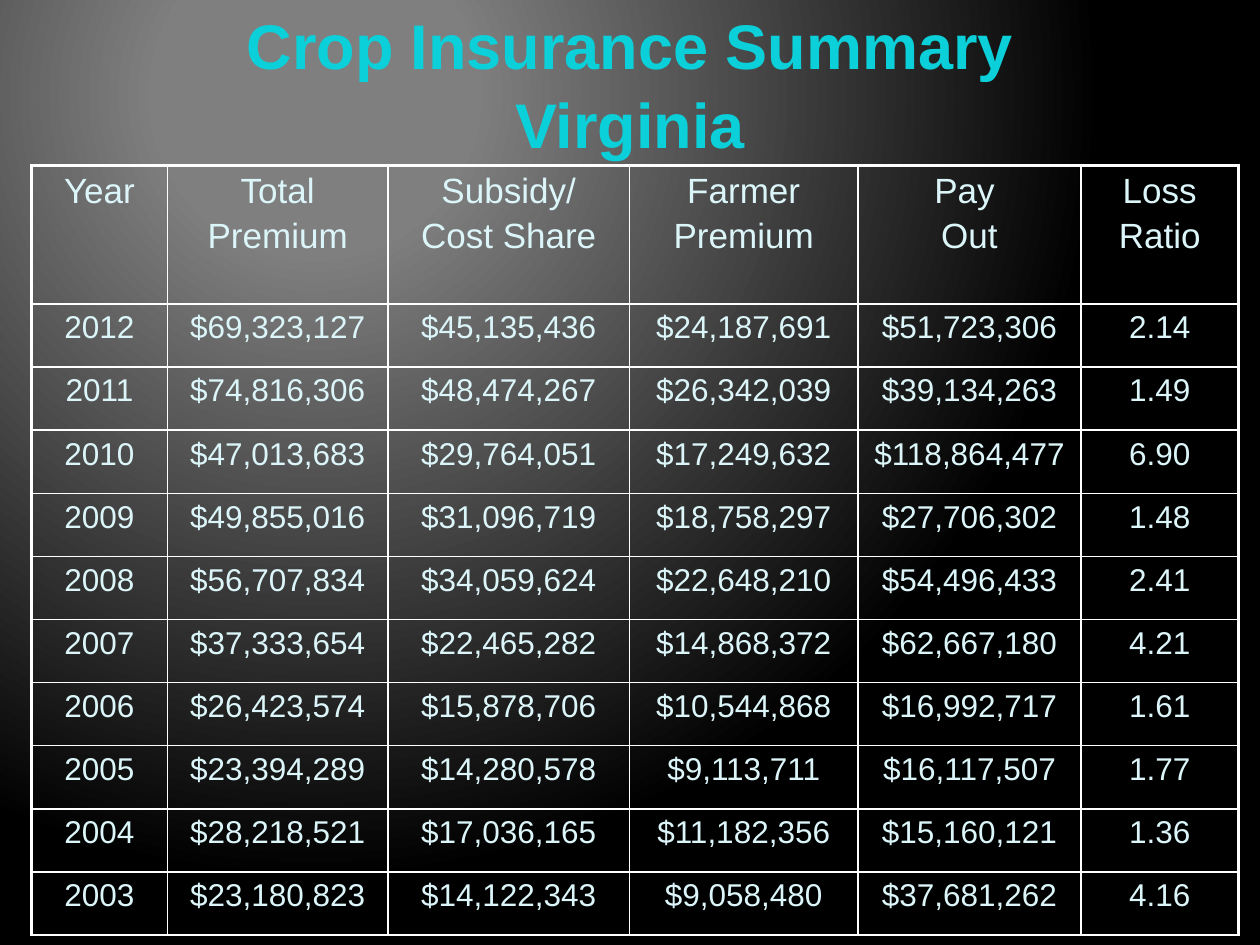
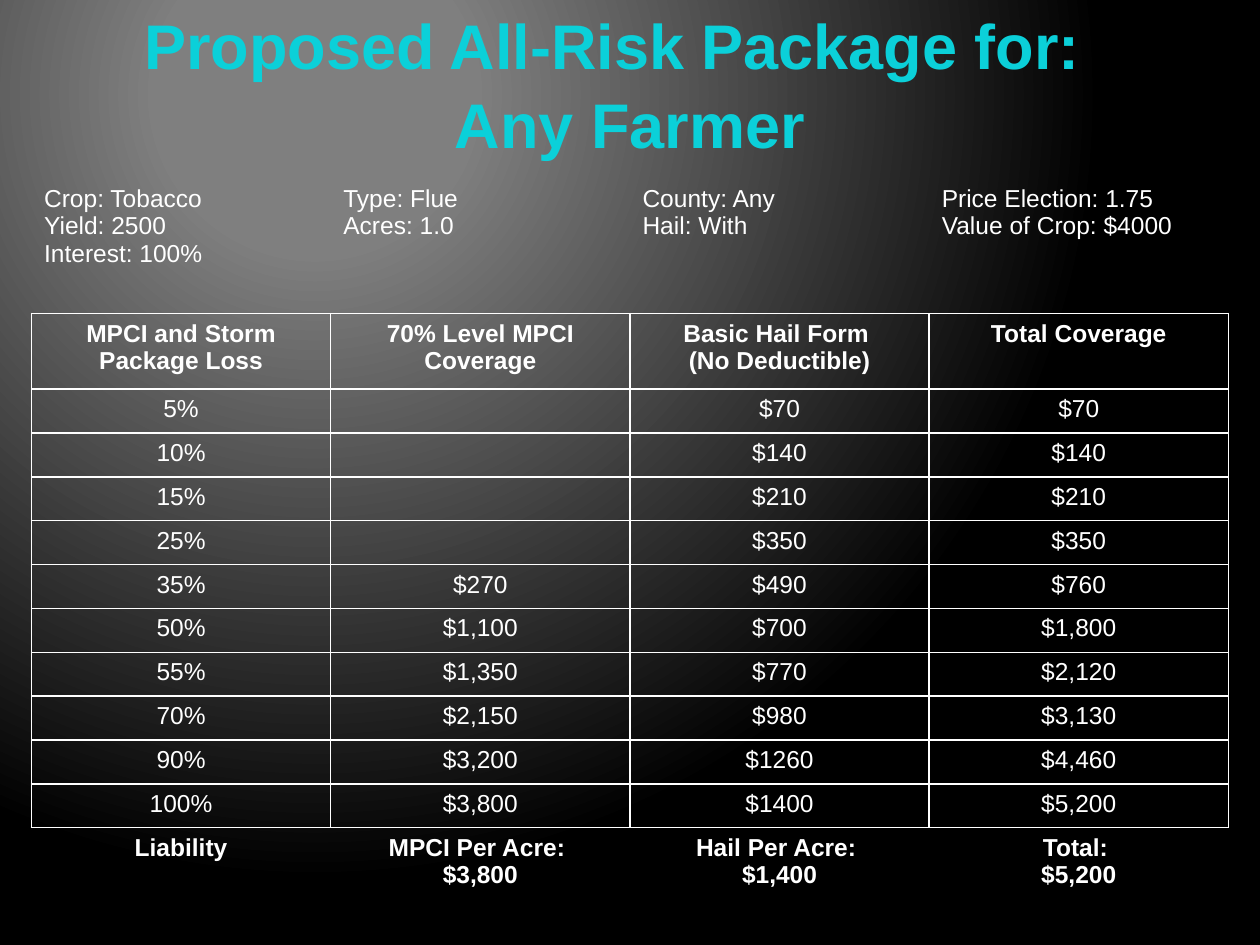
from lxml.etree import SubElement
from pptx import Presentation
from pptx.dml.color import RGBColor
from pptx.enum.text import MSO_ANCHOR, PP_ALIGN
from pptx.oxml import parse_xml
from pptx.oxml.ns import nsdecls, qn
from pptx.util import Pt

TITLE_CYAN = RGBColor(0x0B, 0xD0, 0xD9)
PALE_CYAN = RGBColor(0xDB, 0xF5, 0xF9)
WHITE = RGBColor(0xFF, 0xFF, 0xFF)
GREY = RGBColor(0x7F, 0x7F, 0x7F)
BLACK = RGBColor(0x00, 0x00, 0x00)
FONT = "Arial"
TITLE_ONLY = 5
THIN, THICK = 1, 2.25

SUMMARY_HEADINGS = ["Year", "Total\nPremium", "Subsidy/\nCost Share",
                    "Farmer\nPremium", "Pay \nOut", "Loss\nRatio"]
SUMMARY = [
    ["2012", "$69,323,127", "$45,135,436", "$24,187,691", "$51,723,306", "2.14"],
    ["2011", "$74,816,306", "$48,474,267", "$26,342,039", "$39,134,263", "1.49"],
    ["2010", "$47,013,683", "$29,764,051", "$17,249,632", "$118,864,477", "6.90"],
    ["2009", "$49,855,016", "$31,096,719", "$18,758,297", "$27,706,302", "1.48"],
    ["2008", "$56,707,834", "$34,059,624", "$22,648,210", "$54,496,433", "2.41"],
    ["2007", "$37,333,654", "$22,465,282", "$14,868,372", "$62,667,180", "4.21"],
    ["2006", "$26,423,574", "$15,878,706", "$10,544,868", "$16,992,717", "1.61"],
    ["2005", "$23,394,289", "$14,280,578", "$9,113,711", "$16,117,507", "1.77"],
    ["2004", "$28,218,521", "$17,036,165", "$11,182,356", "$15,160,121", "1.36"],
    ["2003", "$23,180,823", "$14,122,343", "$9,058,480", "$37,681,262", "4.16"],
]

POLICY_FACTS = ["Crop: Tobacco\nYield: 2500\nInterest: 100%",
                "Type: Flue\nAcres: 1.0",
                "County: Any\nHail: With",
                "Price Election: 1.75\nValue of Crop: $4000"]
COVERAGE_HEADINGS = ["MPCI and Storm Package Loss", "70% Level MPCI Coverage",
                     "Basic Hail Form \n(No Deductible)", "Total Coverage"]
COVERAGE = [
    ["5%", "", "$70", "$70"],
    ["10%", "", "$140", "$140"],
    ["15%", "", "$210", "$210"],
    ["25%", "", "$350", "$350"],
    ["35%", "$270", "$490", "$760"],
    ["50%", "$1,100", "$700", "$1,800"],
    ["55%", "$1,350", "$770", "$2,120"],
    ["70%", "$2,150", "$980", "$3,130"],
    ["90%", "$3,200", "$1260", "$4,460"],
    ["100%", "$3,800", "$1400", "$5,200"],
]
LIABILITY = ["Liability", "MPCI Per Acre: \n$3,800",
             "Hail Per Acre: \n$1,400", "Total: \n$5,200"]


def set_spotlight_background(master):
    """Grey glow at the upper left that fades to black."""
    fill = master.background.fill
    fill.gradient()
    for stop, color, position in zip(fill.gradient_stops, (GREY, BLACK), (0.2, 1)):
        stop.color.rgb = color
        stop.position = position
    linear = next(master.element.iter(qn("a:lin")))
    linear.getparent().replace(linear, parse_xml(
        f'<a:path {nsdecls("a")} path="circle">'
        '<a:fillToRect l="50000" t="20000" r="100000" b="100000"/></a:path>'))


def style_font(font, size, color, bold=False):
    font.name = FONT
    font.size = Pt(size)
    font.bold = bold
    font.color.rgb = color


def line_xml(tag, width):
    """Solid white line of the given width, or no line for width 0."""
    paint = (f'<a:solidFill><a:srgbClr val="{WHITE}"/></a:solidFill>'
             if width else "<a:noFill/>")
    return parse_xml(f'<a:{tag} {nsdecls("a")} w="{Pt(width)}">{paint}</a:{tag}>')


def add_page(deck, title_text):
    page = deck.slides.add_slide(deck.slide_layouts[TITLE_ONLY])
    title = page.shapes.title
    title.left, title.top, title.width, title.height = 0, 0, Pt(720), Pt(94.3)
    title.text_frame.vertical_anchor = MSO_ANCHOR.MIDDLE
    para = title.text_frame.paragraphs[0]
    para.text = title_text
    para.alignment = PP_ALIGN.CENTER
    para.line_spacing = 1.04
    style_font(para.font, 36, TITLE_CYAN, bold=True)
    for properties in title.element.iter(qn("a:defRPr")):
        properties.insert(0, line_xml("ln", 1.5))
    return page


def add_grid(page, left, top, widths, heights):
    """Add a plain table without style banding."""
    frame = page.shapes.add_table(len(heights), len(widths), Pt(left), Pt(top),
                                  Pt(sum(widths)), Pt(sum(heights)))
    table = frame.table
    table.first_row = table.horz_banding = False
    for column, width in zip(table.columns, widths):
        column.width = Pt(width)
    for row, height in zip(table.rows, heights):
        row.height = Pt(height)
    return table


def fill_row(row, texts, size, color, bold=False,
             align=PP_ALIGN.CENTER, space_before=0):
    for cell, text in zip(row.cells, texts):
        cell.fill.background()
        cell.text_frame.text = text
        for para in cell.text_frame.paragraphs:
            para.alignment = align
            para.space_before = Pt(space_before)
            style_font(para.font, size, color, bold)
            if not text:
                SubElement(para._p, qn("a:endParaRPr"), sz=str(size * 100))


def set_borders(cell, left=THIN, right=THIN, top=THIN, bottom=THIN):
    properties = cell._tc.get_or_add_tcPr()
    sides = {"lnL": left, "lnR": right, "lnT": top, "lnB": bottom}
    for index, (tag, width) in enumerate(sides.items()):
        properties.insert(index, line_xml(tag, width))


def add_summary_page(deck):
    page = add_page(deck, "Crop Insurance Summary\nVirginia")
    widths = [77.7, 126, 138, 130.6, 127.4, 90]
    table = add_grid(page, 18, 94.5, widths, [79.2] + [36.08] * len(SUMMARY))
    heading, *years = table.rows
    fill_row(heading, SUMMARY_HEADINGS, 20, PALE_CYAN, space_before=3.5)
    for row, texts in zip(years, SUMMARY):
        fill_row(row, texts, 18, PALE_CYAN, space_before=3.5)
    last = len(widths) - 1
    for r, row in enumerate(table.rows):
        for c, cell in enumerate(row.cells):
            set_borders(cell, left=THICK if c == 0 else THIN,
                        right=THICK if c == last else THIN,
                        top=THICK if r == 0 else THIN)


def add_package_page(deck):
    page = add_page(deck, "Proposed All-Risk Package for:  \nAny Farmer")
    heights = [77, 43.2] + [25.08] * len(COVERAGE) + [43.2]
    table = add_grid(page, 18, 102.2, [171] * 4, heights)
    facts, heading, *losses, liability = table.rows
    fill_row(facts, POLICY_FACTS, 14, WHITE, align=PP_ALIGN.LEFT)
    fill_row(heading, COVERAGE_HEADINGS, 14, WHITE, bold=True)
    for row, texts in zip(losses, COVERAGE):
        fill_row(row, texts, 14, WHITE)
    fill_row(liability, LIABILITY, 14, WHITE, bold=True)
    for cell in facts.cells:
        set_borders(cell, left=0, right=0, top=0)
    for row in [heading, *losses]:
        for cell in row.cells:
            set_borders(cell)
    for cell in liability.cells:
        set_borders(cell, left=0, right=0, bottom=0)


def main():
    deck = Presentation()
    deck.slide_width, deck.slide_height = Pt(720), Pt(540)
    set_spotlight_background(deck.slide_master)
    add_summary_page(deck)
    add_package_page(deck)
    deck.save("out.pptx")


if __name__ == "__main__":
    main()
